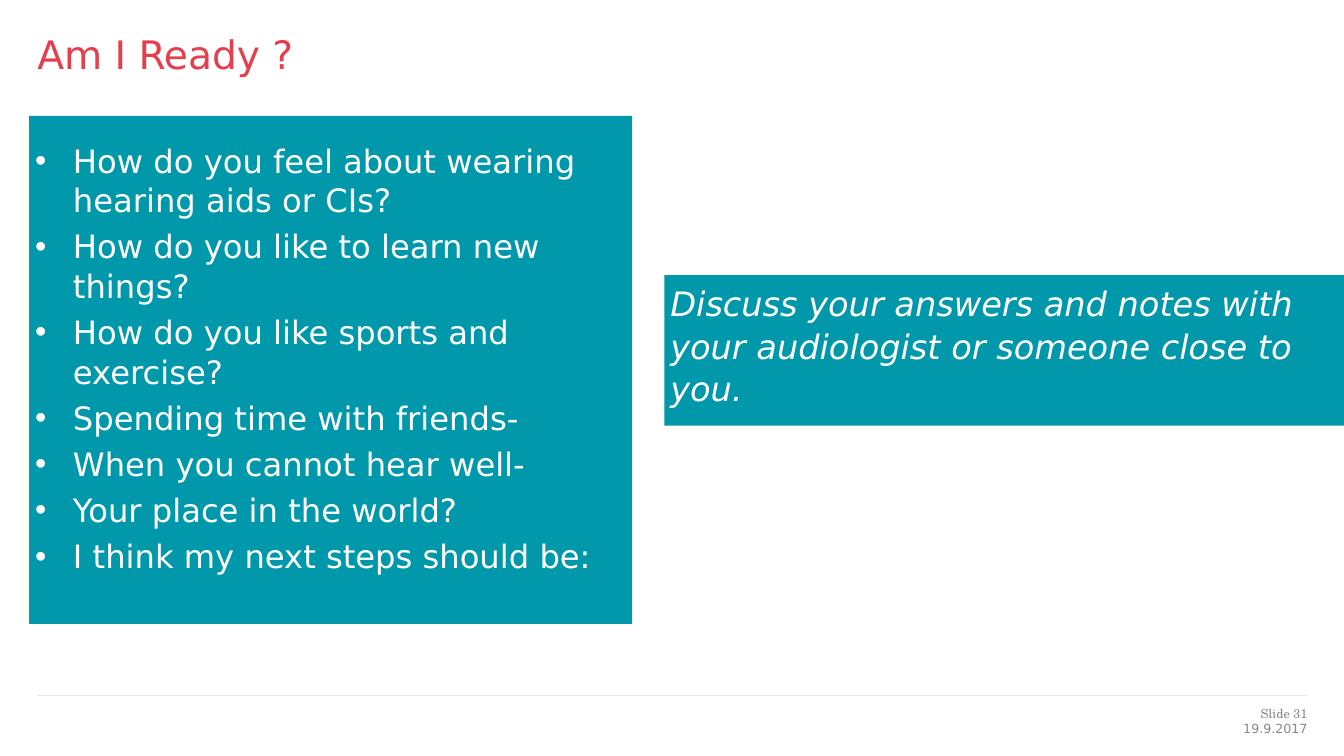
from lxml import etree
from pptx import Presentation
from pptx.dml.color import RGBColor
from pptx.enum.shapes import MSO_CONNECTOR, MSO_SHAPE
from pptx.enum.text import MSO_ANCHOR, PP_ALIGN
from pptx.oxml.ns import qn
from pptx.util import Pt

STRAIGHT, RECTANGLE = MSO_CONNECTOR.STRAIGHT, MSO_SHAPE.RECTANGLE
TOP, LEFT, RIGHT = MSO_ANCHOR.TOP, PP_ALIGN.LEFT, PP_ALIGN.RIGHT

RED = RGBColor(0xE6, 0x3E, 0x4D)
TEAL = RGBColor(0x00, 0x98, 0xAA)
WHITE = RGBColor(0xFF, 0xFF, 0xFF)
GREY = RGBColor(0x89, 0x89, 0x89)
RULE = RGBColor(0x26, 0x26, 0x26)

SANS, SERIF = "DejaVu Sans", "TeX Gyre Schola"
MARGIN_LEFT, MARGIN_RIGHT = 26.64, 933.84
PANEL_INSET = 4.32
BULLET_INDENT = 27

QUESTIONS = [
    "How do you feel about wearing hearing aids or CIs?",
    "How do you like to learn new things?",
    "How do you like sports and exercise?",
    "Spending time with friends-",
    "When you cannot hear well-",
    "Your place in the world?",
    "I think my next steps should be:",
]


class SlideBuilder:
    def __init__(self, presentation):
        self.slide = presentation.slides.add_slide(presentation.slide_layouts[6])

    def rule(self, left, right, top):
        line = self.slide.shapes.add_connector(
            STRAIGHT, Pt(left), Pt(top), Pt(right), Pt(top))
        line.line.width = Pt(0.25)
        line.line.color.rgb = RULE
        properties = line._element.spPr
        color = properties.find(".//" + qn("a:srgbClr"))
        etree.SubElement(color, qn("a:alpha"), val="31000")
        etree.SubElement(properties, qn("a:effectLst"))

    def text(self, box, lines, size, color, **style):
        shape = self.slide.shapes.add_textbox(*map(Pt, box))
        self.fill_text(shape, lines, size, color, **style)

    def panel(self, box, lines, size, **style):
        shape = self.slide.shapes.add_shape(RECTANGLE, *map(Pt, box))
        shape.shadow.inherit = False
        shape.fill.solid()
        shape.fill.fore_color.rgb = TEAL
        shape.line.fill.background()
        self.fill_text(shape, lines, size, WHITE, **style)

    def fill_text(self, shape, lines, size, color, font=SANS, italic=False,
                  align=LEFT, spacing=1.0, inset=0, inset_top=None, bullets=False):
        frame = shape.text_frame
        frame_format = {
            "word_wrap": True, "vertical_anchor": TOP,
            "margin_left": Pt(inset), "margin_right": Pt(inset),
            "margin_top": Pt(inset if inset_top is None else inset_top),
            "margin_bottom": Pt(inset),
        }
        for name, value in frame_format.items():
            setattr(frame, name, value)
        for index, line in enumerate(lines):
            paragraph = frame.add_paragraph() if index else frame.paragraphs[0]
            paragraph.text = line
            paragraph.alignment = align
            paragraph.line_spacing = spacing
            paragraph.space_before = Pt(4.5 if index else 0)
            if bullets:
                self.bullet(paragraph)
            font_format = {"name": font, "size": Pt(size), "italic": italic}
            for name, value in font_format.items():
                setattr(paragraph.font, name, value)
            paragraph.font.color.rgb = color

    def bullet(self, paragraph):
        properties = paragraph._p.get_or_add_pPr()
        properties.set("marL", str(Pt(BULLET_INDENT)))
        properties.set("indent", str(-Pt(BULLET_INDENT)))
        etree.SubElement(properties, qn("a:buFont"), typeface="Arial")
        etree.SubElement(properties, qn("a:buChar"), char="•")


def main():
    presentation = Presentation()
    presentation.slide_width, presentation.slide_height = Pt(960), Pt(540)
    builder = SlideBuilder(presentation)

    # Title
    builder.text((MARGIN_LEFT, 20.16, MARGIN_RIGHT - MARGIN_LEFT, 67.68),
                 ["Am I Ready ?"], 28, RED, spacing=1.05)

    # Questions and advice
    builder.panel((20.8, 82.8, 430.8, 362.88), QUESTIONS, 23, spacing=1.03,
                  inset=PANEL_INSET, inset_top=17, bullets=True)
    builder.panel((474.48, 196.56, 491.04, 107.6),
                  ["Discuss your answers and notes with your audiologist "
                   "or someone close to you."],
                  24, italic=True, spacing=1.05, inset=PANEL_INSET)

    # Footer
    builder.rule(MARGIN_LEFT, MARGIN_RIGHT, 496.6)
    footer = [("Slide 31", SERIF, 504, 107), ("19.9.2017", SANS, 514.8, 133)]
    for label, font, top, width in footer:
        builder.text((MARGIN_RIGHT - width, top, width, 12), [label], 9, GREY,
                     font=font, align=RIGHT)

    presentation.save("out.pptx")


if __name__ == "__main__":
    main()
